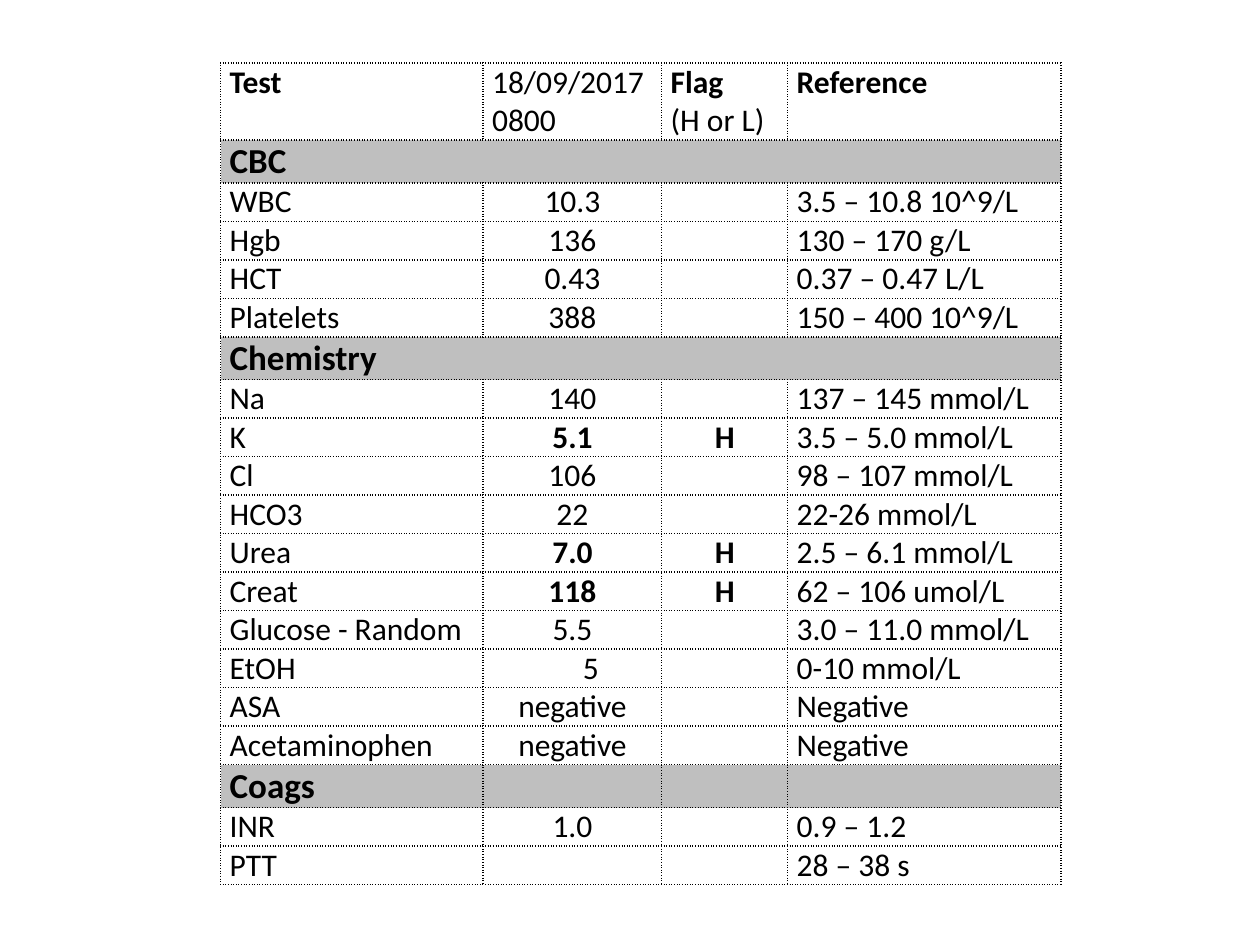
from lxml import etree
from pptx import Presentation
from pptx.dml.color import RGBColor
from pptx.enum import text
from pptx.oxml import ns
from pptx.util import Cm, Pt

FONT = "Calibri"
BLACK, WHITE, GREY = "000000", "FFFFFF", "BFBFBF"
WIDTHS = [5.29, 3.6, 2.54, 5.51]
HEAD_H, GROUP_H, ROW_H = 1.52, 0.84, 0.76
TABS = [(1.83, "l"), (1.96, "ctr")]

# Each heading line is (words, bold)
HEADS = [
    [("Test", True)],
    [("18/09/2017", False), ("0800", False)],
    [("Flag", True), ("(H or L)", False)],
    [("Reference", True)],
]

# Group name, whether its band is merged, and its tests
GROUPS = [
    ("CBC", True, [
        ("WBC", "10.3", "", "3.5 – 10.8 10^9/L"),
        ("Hgb", "136", "", "130 – 170 g/L"),
        ("HCT", "0.43", "", "0.37 – 0.47 L/L"),
        ("Platelets", "388", "", "150 – 400 10^9/L"),
    ]),
    ("Chemistry", True, [
        ("Na", "140", "", "137 – 145 mmol/L"),
        ("K", "5.1", "H", "3.5 – 5.0 mmol/L"),
        ("Cl", "106", "", "98 – 107 mmol/L"),
        ("HCO3", "22", "", "22-26 mmol/L"),
        ("Urea", "7.0", "H", "2.5 – 6.1 mmol/L"),
        ("Creat", "118", "H", "62 – 106 umol/L"),
        ("Glucose - Random", "5.5", "", "3.0 – 11.0 mmol/L"),
        ("EtOH", "\t\t5", "", "0-10 mmol/L"),
        ("ASA", "negative", "", "Negative"),
        ("Acetaminophen", "negative", "", "Negative"),
    ]),
    ("Coags", False, [
        ("INR", "1.0", "", "0.9 – 1.2"),
        ("PTT", "", "", "28 – 38 s"),
    ]),
]


def color(code):
    return RGBColor.from_string(code)


def add_node(parent, tag, **attrs):
    return etree.SubElement(parent, ns.qn(tag), **attrs)


def set_edges(cell):
    """Draw dotted lines on all four sides; they must precede the fill."""
    props = cell._tc.get_or_add_tcPr()
    for spot, side in enumerate("LRTB"):
        line = etree.Element(ns.qn(f"a:ln{side}"), w=str(Pt(1)))
        add_node(add_node(line, "a:solidFill"), "a:srgbClr", val=BLACK)
        add_node(line, "a:prstDash", val="dot")
        props.insert(spot, line)


def set_tabs(para):
    stops = add_node(para._p.get_or_add_pPr(), "a:tabLst")
    for pos, kind in TABS:
        add_node(stops, "a:tab", pos=str(Cm(pos)), algn=kind)


def style_cell(cell, fill=None):
    cell.margin_left = cell.margin_right = Cm(0.18)
    cell.margin_top = cell.margin_bottom = 0
    if fill:
        cell.fill.solid()
        cell.fill.fore_color.rgb = color(fill)
    else:
        cell.fill.background()
    set_edges(cell)


def add_text(para, words, size=18, bold=False, center=False):
    if not words:
        return
    if words.startswith("\t"):
        set_tabs(para)
    elif center:
        para.alignment = text.PP_ALIGN.CENTER
    run = para.add_run()
    run.text = words
    font = run.font
    font.name, font.size, font.bold = FONT, Pt(size), bold
    font.color.rgb = color(BLACK)


def fill_head(row):
    row.height = Cm(HEAD_H)
    for cell, lines in zip(row.cells, HEADS):
        style_cell(cell, WHITE)
        frame = cell.text_frame
        for num, (words, bold) in enumerate(lines):
            para = frame.add_paragraph() if num else frame.paragraphs[0]
            add_text(para, words, bold=bold)


def fill_group(row, name, merged):
    row.height = Cm(GROUP_H)
    cells = list(row.cells)
    for cell in cells:
        style_cell(cell, GREY)
    if merged:
        cells[0].merge(cells[-1])
    add_text(cells[0].text_frame.paragraphs[0], name, size=20, bold=True)


def fill_test(row, test):
    row.height = Cm(ROW_H)
    high = bool(test[2])
    for col, (cell, words) in enumerate(zip(row.cells, test)):
        style_cell(cell)
        mid = col in (1, 2)
        add_text(cell.text_frame.paragraphs[0], words,
                 bold=mid and high, center=mid)


def add_labs(slide):
    count = 1 + sum(1 + len(tests) for _, _, tests in GROUPS)
    frame = slide.shapes.add_table(count, len(WIDTHS), Cm(4.45), Cm(1.27),
                                   Cm(sum(WIDTHS)), Cm(16.2))
    table = frame.table
    table.first_row = table.horz_banding = False
    for col, width in zip(table.columns, WIDTHS):
        col.width = Cm(width)

    # Heading first, then each band with its tests
    rows = iter(table.rows)
    fill_head(next(rows))
    for name, merged, tests in GROUPS:
        fill_group(next(rows), name, merged)
        for test in tests:
            fill_test(next(rows), test)


def main():
    deck = Presentation()
    deck.slide_width, deck.slide_height = Cm(25.4), Cm(19.05)
    slide = deck.slides.add_slide(deck.slide_layouts[6])
    add_labs(slide)
    deck.save("out.pptx")


if __name__ == "__main__":
    main()
